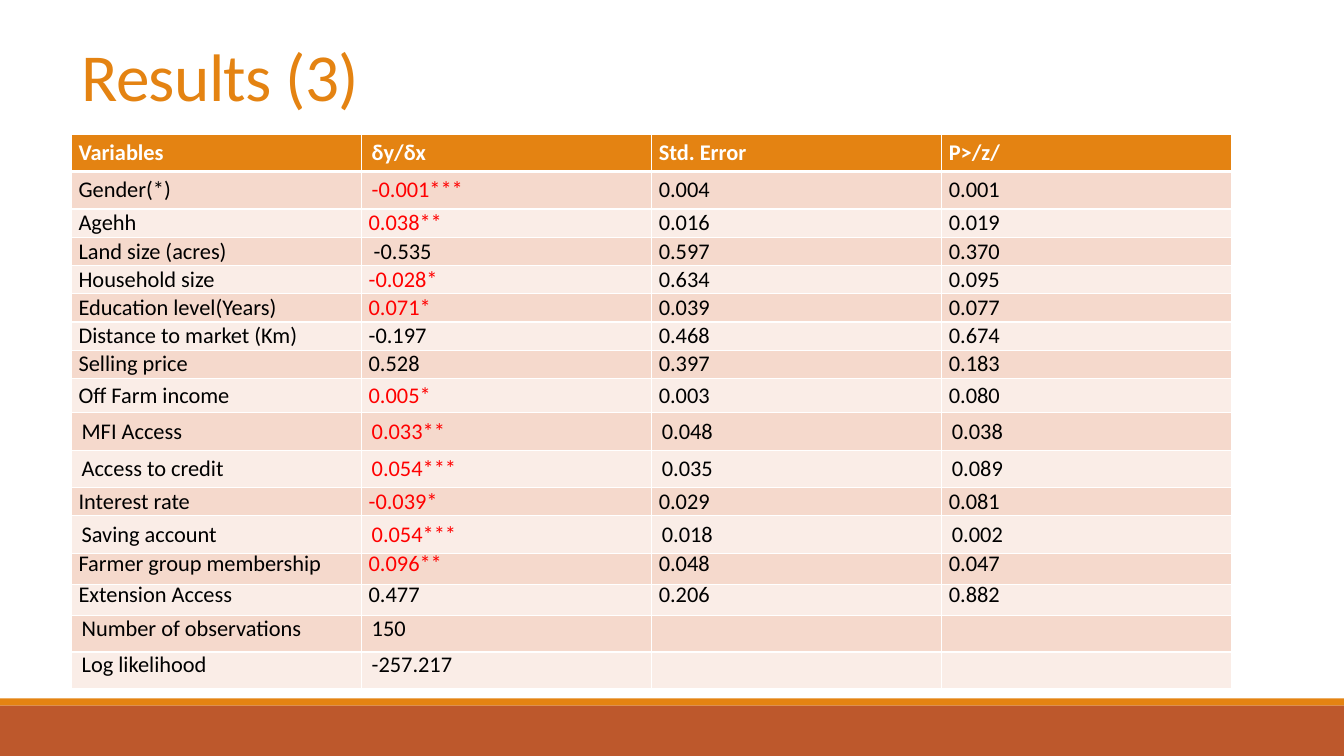
from lxml import etree
from pptx import Presentation
from pptx.dml.color import RGBColor
from pptx.enum.shapes import MSO_SHAPE
from pptx.enum.text import MSO_ANCHOR, MSO_AUTO_SIZE, PP_ALIGN
from pptx.oxml.ns import qn
from pptx.util import Inches, Pt

RECT = MSO_SHAPE.RECTANGLE
MIDDLE, BOTTOM = MSO_ANCHOR.MIDDLE, MSO_ANCHOR.BOTTOM
LEFT, JUSTIFY = PP_ALIGN.LEFT, PP_ALIGN.JUSTIFY
NO_FIT = MSO_AUTO_SIZE.NONE

W, H = 13.33, 7.5
FONT = "Calibri"
ORANGE, RUST, WHITE, BLACK, RED = "E48312", "BD582C", "FFFFFF", "000000", "FF0000"
BANDS = ("FAEDE7", "F5D9CC")

# Cell margins (side, top and bottom): tight, roomy, or roomy in the second column only
TIGHT, ROOMY, MIXED = "tight", "roomy", "mixed"
MARGINS = {TIGHT: (0.07, 0), ROOMY: (0.1, 0.05)}

# Row height, margins, cell texts
ROWS = [
    (0.36, MIXED, ["Variables", "δy/δx", "Std. Error", "P>/z/"]),
    (0.33, MIXED, ["Gender(*)", "-0.001***", "0.004", "0.001"]),
    (0.28, TIGHT, ["Agehh", "0.038**", "0.016", "0.019"]),
    (0.28, TIGHT, ["Land size (acres)", " -0.535", "0.597", "0.370"]),
    (0.28, TIGHT, ["Household size", "-0.028*", "0.634", "0.095"]),
    (0.28, TIGHT, ["Education level(Years)", "0.071*", "0.039", "0.077"]),
    (0.28, TIGHT, ["Distance to market (Km)", "-0.197", "0.468", "0.674"]),
    (0.28, TIGHT, ["Selling price", "0.528", "0.397", "0.183"]),
    (0.34, TIGHT, ["Off Farm income", "0.005*", "0.003", "0.080"]),
    (0.33, ROOMY, ["MFI Access", "0.033**", "0.048", "0.038"]),
    (0.33, ROOMY, ["Access to credit", "0.054***", "0.035", "0.089"]),
    (0.28, TIGHT, ["Interest rate", "-0.039*", "0.029", "0.081"]),
    (0.33, ROOMY, ["Saving account", "0.054***", "0.018", "0.002"]),
    (0.31, TIGHT, ["Farmer group membership", "0.096**", "0.048", "0.047"]),
    (0.31, TIGHT, ["Extension Access", "0.477", "0.206", "0.882"]),
    (0.36, ROOMY, ["Number of observations", "150", "", ""]),
    (0.36, ROOMY, ["Log likelihood", "-257.217", "", ""]),
]
FIXED_LEADING_FROM = len(ROWS) - 4


def rgb(value):
    return RGBColor.from_string(value)


def style_run(r, size, color, bold=False):
    r.font.name, r.font.size, r.font.bold = FONT, Pt(size), bold
    r.font.color.rgb = rgb(color)


def add_footer(s, x, y, w, h):
    """Thin orange stripe above a rust band."""
    stripe = 0.07
    for top, height, color in ((y, stripe, ORANGE), (y + stripe, h - stripe, RUST)):
        sp = s.shapes.add_shape(RECT, Inches(x), Inches(top), Inches(w), Inches(height))
        sp.shadow.inherit = False
        sp.fill.solid()
        sp.fill.fore_color.rgb = rgb(color)
        sp.line.fill.background()


def set_title(s, text, x, y, w, h):
    sp = s.shapes.title
    sp.left, sp.top, sp.width, sp.height = (Inches(v) for v in (x, y, w, h))
    tf = sp.text_frame
    tf.text = text
    tf.auto_size, tf.vertical_anchor, tf.word_wrap = NO_FIT, BOTTOM, True
    p = tf.paragraphs[0]
    p.alignment, p.line_spacing = LEFT, 0.85
    r = p.runs[0]
    style_run(r, 48, ORANGE)
    r.font._element.set("spc", "-50")


def set_borders(cell, row):
    """White rules, heavier between the header and the body."""
    tcPr = cell._tc.get_or_add_tcPr()
    heavy = {0: "lnB", 1: "lnT"}.get(row)
    for side in ("lnL", "lnR", "lnT", "lnB"):
        ln = etree.SubElement(tcPr, qn("a:" + side), w=str(Pt(3 if side == heavy else 1)))
        fill = etree.SubElement(ln, qn("a:solidFill"))
        etree.SubElement(fill, qn("a:srgbClr"), val=WHITE)


def fill_cell(cell, row, col, text, margins):
    if margins == MIXED:
        margins = ROOMY if col == 1 else TIGHT
    side, edge = MARGINS[margins if text else TIGHT]
    cell.margin_left = cell.margin_right = Inches(side)
    cell.margin_top = cell.margin_bottom = Inches(edge)
    cell.vertical_anchor = MIDDLE
    set_borders(cell, row)
    cell.fill.solid()
    cell.fill.fore_color.rgb = rgb(BANDS[row % 2] if row else ORANGE)
    if not text:
        return
    cell.text = text
    p = cell.text_frame.paragraphs[0]
    p.alignment = JUSTIFY
    if row >= FIXED_LEADING_FROM:
        p.line_spacing, p.space_after = Pt(12), Pt(6)
    significant = col == 1 and text.endswith("*")
    color = WHITE if row == 0 else RED if significant else BLACK
    style_run(p.runs[0], 16, color, bold=row == 0)


def add_results_table(s, x, y, w):
    cols = len(ROWS[0][2])
    h = sum(height for height, _, _ in ROWS)
    table = s.shapes.add_table(len(ROWS), cols, Inches(x), Inches(y), Inches(w), Inches(h)).table
    for column in table.columns:
        column.width = Inches(w / cols)
    for row, (height, margins, texts) in enumerate(ROWS):
        table.rows[row].height = Inches(height)
        for col, text in enumerate(texts):
            fill_cell(table.cell(row, col), row, col, text, margins)


def main():
    prs = Presentation()
    prs.slide_width, prs.slide_height = Inches(W), Inches(H)
    s = prs.slides.add_slide(prs.slide_layouts[5])
    left = 0.71
    add_footer(s, 0, H - 0.57, W, 0.57)
    set_title(s, "Results (3)", left, 0.34, 10.29, 0.85)
    add_results_table(s, left, 1.33, 11.51)
    prs.save("out.pptx")


if __name__ == "__main__":
    main()
